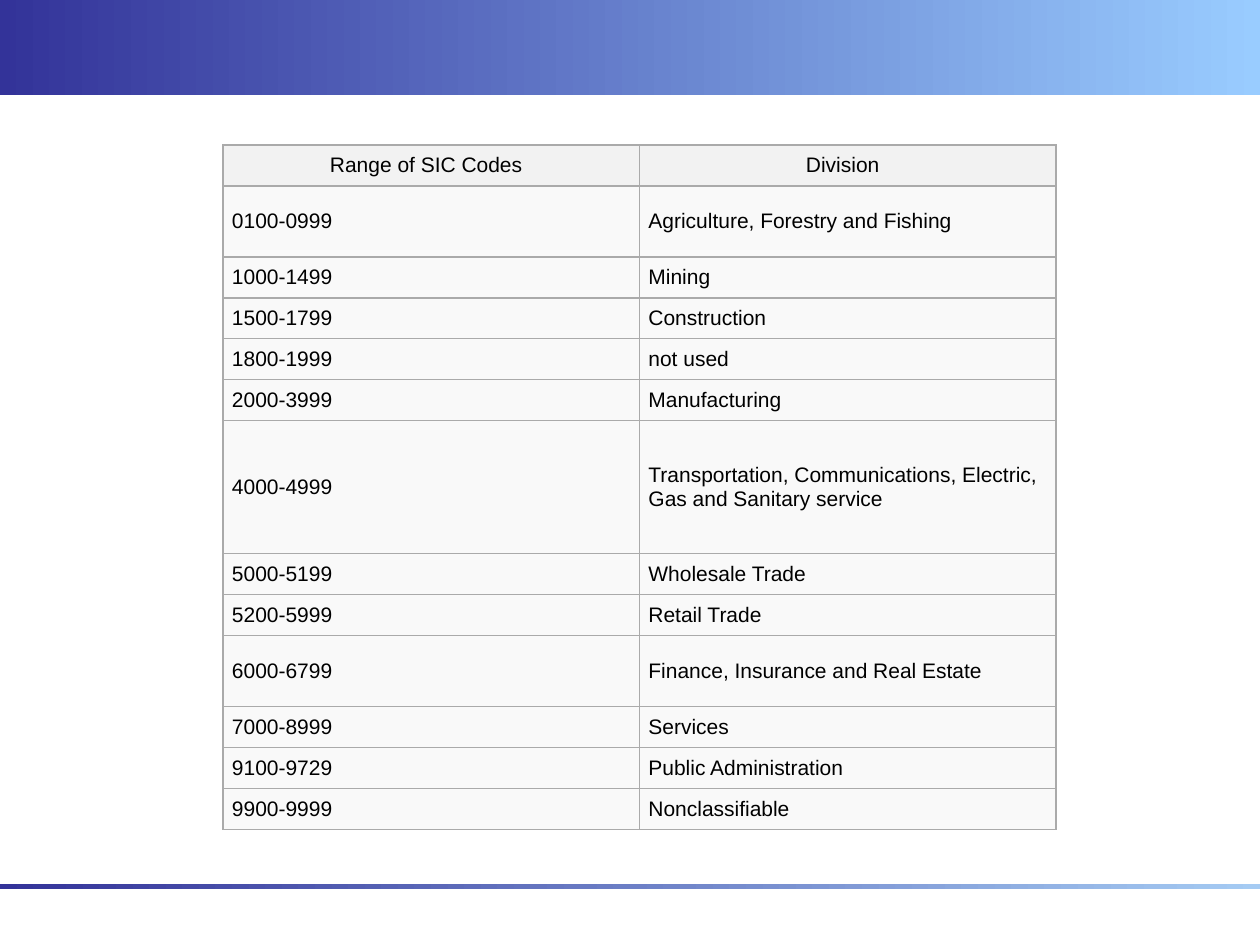
from lxml.etree import SubElement
from pptx import Presentation
from pptx.dml.color import RGBColor
from pptx.enum.shapes import MSO_SHAPE
from pptx.enum.text import MSO_ANCHOR, PP_ALIGN
from pptx.oxml.ns import qn
from pptx.util import Pt

PX = 914400 / 126
INDIGO = RGBColor(0x33, 0x33, 0x99)
SKY = RGBColor(0x99, 0xCC, 0xFF)
PALE_SKY = RGBColor(0xA5, 0xCB, 0xF3)
HEADER_FILL = RGBColor(0xF2, 0xF2, 0xF2)
BODY_FILL = RGBColor(0xF9, 0xF9, 0xF9)
BORDER = RGBColor(0xAA, 0xAA, 0xAA)
BLACK = RGBColor(0, 0, 0)


def px(n):
    return round(n * PX)


def add_borders(cell):
    tcPr = cell._tc.get_or_add_tcPr()
    for side in ("a:lnL", "a:lnR", "a:lnT", "a:lnB"):
        ln = SubElement(tcPr, qn(side), w=str(Pt(0.75)))
        fill = SubElement(ln, qn("a:solidFill"))
        SubElement(fill, qn("a:srgbClr"), val=str(BORDER))


prs = Presentation()
prs.slide_width, prs.slide_height = px(1260), px(945)
s = prs.slides.add_slide(prs.slide_layouts[6])

# Gradient bands: top, height, end colour
for top, height, end in ((0, 95, SKY), (884, 5, PALE_SKY)):
    sp = s.shapes.add_shape(MSO_SHAPE.RECTANGLE, 0, px(top), px(1260), px(height))
    sp.shadow.inherit = False
    sp.line.fill.background()
    sp.fill.gradient()
    sp.fill.gradient_angle = 0
    for stop, color in zip(sp.fill.gradient_stops, (INDIGO, end)):
        stop.color.rgb = color

# Table of SIC code ranges: range, division, row height
rows = [
    ("Range of SIC Codes", "Division", 41),
    ("0100-0999", "Agriculture, Forestry and Fishing", 71),
    ("1000-1499", "Mining", 41),
    ("1500-1799", "Construction", 41),
    ("1800-1999", "not used", 41),
    ("2000-3999", "Manufacturing", 41),
    ("4000-4999", "Transportation, Communications, Electric, Gas and Sanitary service", 133),
    ("5000-5199", "Wholesale Trade", 41),
    ("5200-5999", "Retail Trade", 41),
    ("6000-6799", "Finance, Insurance and Real Estate", 71),
    ("7000-8999", "Services", 41),
    ("9100-9729", "Public Administration", 41),
    ("9900-9999", "Nonclassifiable", 41),
]
total = sum(row[2] for row in rows)
table = s.shapes.add_table(len(rows), 2, px(223), px(145), px(833), px(total)).table
table.horz_banding = False

for i, (codes, division, height) in enumerate(rows):
    header = i == 0
    table.rows[i].height = px(height)
    for j, text in enumerate((codes, division)):
        cell = table.cell(i, j)
        add_borders(cell)
        cell.fill.solid()
        cell.fill.fore_color.rgb = HEADER_FILL if header else BODY_FILL
        cell.vertical_anchor = MSO_ANCHOR.MIDDLE
        cell.margin_left = px(9)
        cell.margin_right = px(19 if header else 9)
        cell.margin_top = cell.margin_bottom = px(4)
        p = cell.text_frame.paragraphs[0]
        p.alignment = PP_ALIGN.CENTER if header else PP_ALIGN.LEFT
        r = p.add_run()
        r.text = text
        for name, value in {"name": "Arial", "size": Pt(12), "bold": False}.items():
            setattr(r.font, name, value)
        r.font.color.rgb = BLACK

prs.save("out.pptx")
